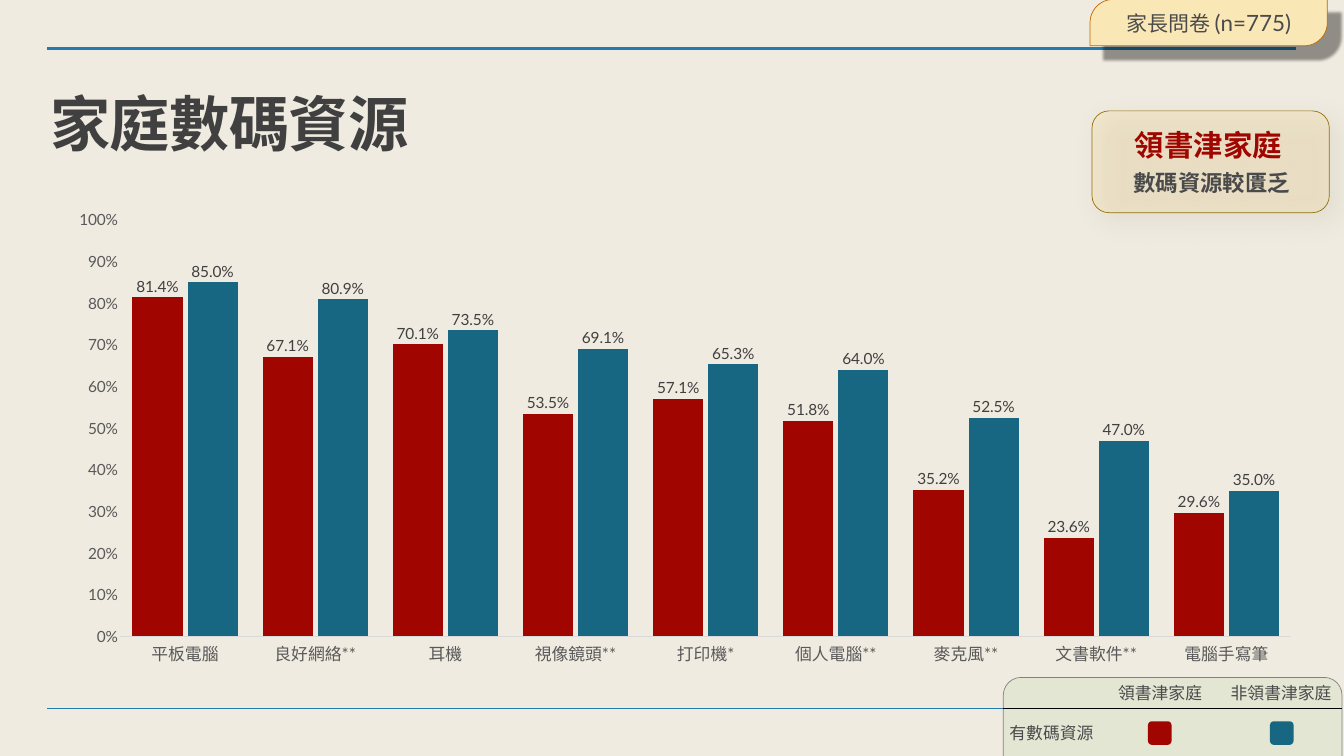
from lxml import etree
from pptx import Presentation
from pptx.chart.data import CategoryChartData
from pptx.dml.color import RGBColor
from pptx.enum.chart import XL_CHART_TYPE, XL_LABEL_POSITION, XL_TICK_LABEL_POSITION, XL_TICK_MARK
from pptx.enum.shapes import MSO_CONNECTOR, MSO_SHAPE
from pptx.enum.text import MSO_ANCHOR, MSO_AUTO_SIZE, PP_ALIGN
from pptx.oxml import parse_xml
from pptx.oxml.ns import nsdecls, qn
from pptx.util import Cm, Pt

CENTER = PP_ALIGN.CENTER
TOP, MIDDLE = MSO_ANCHOR.TOP, MSO_ANCHOR.MIDDLE
NO_TICK = XL_TICK_MARK.NONE
FONT = "Lato"
COLORS = {
    "page": "F0EBE0", "rule": "227AAF", "title": "404040", "axis": "595959",
    "grid": "D9D9D9", "text": "4A4A4B", "red": "A00500", "blue": "176682",
    "legend": "BCD9AA", "legend line": "808080", "note": "F7DC92",
    "note line": "936E0A", "tab": "FAE7B6", "tab line": "BF6500",
}
COLORS = {name: RGBColor.from_string(value) for name, value in COLORS.items()}


def add_panel(kind, place, fill, line=None, alpha=None, shadow=None):
    """Add a filled shape; shadow is colour, alpha %, blur pt, distance pt."""
    panel = page.shapes.add_shape(kind, *[Cm(value) for value in place])
    panel.shadow.inherit = False
    panel.fill.solid()
    panel.fill.fore_color.rgb = COLORS[fill]
    if line:
        panel.line.color.rgb = COLORS[line]
        panel.line.width = Pt(1)
    else:
        panel.line.fill.background()
    if alpha:
        color = panel._element.spPr.find(qn("a:solidFill"))[0]
        etree.SubElement(color, qn("a:alpha"), val=str(alpha * 1000))
    if shadow:
        shade, opacity, blur, distance = shadow
        panel._element.spPr.find(qn("a:effectLst")).append(parse_xml(
            f'<a:outerShdw {nsdecls("a")} blurRad="{Pt(blur)}" dist="{Pt(distance)}" '
            f'dir="2700000" algn="tl" rotWithShape="0"><a:srgbClr val="{shade}">'
            f'<a:alpha val="{opacity * 1000}"/></a:srgbClr></a:outerShdw>'))
    return panel


def add_span(para, text, size, color="text", bold=False, font=FONT):
    span = para.add_run()
    span.text = text
    span.font.name = font
    span.font.size = Pt(size)
    span.font.bold = bold
    span.font.color.rgb = COLORS[color]
    return span


deck = Presentation()
deck.slide_width, deck.slide_height = Cm(67.74), Cm(38.1)
page = deck.slides.add_slide(deck.slide_layouts[5])
page.background.fill.solid()
page.background.fill.fore_color.rgb = COLORS["page"]

# Rules across the page
for y, width in ((2.46, 4), (35.71, 1)):
    rule = page.shapes.add_connector(MSO_CONNECTOR.STRAIGHT, Cm(2.39), Cm(y), Cm(65.33), Cm(y))
    rule.line.color.rgb = COLORS["rule"]
    rule.line.width = Pt(width)
    etree.SubElement(rule._element.spPr, qn("a:effectLst"))

# Title
title = page.shapes.title
title.left, title.top, title.width, title.height = Cm(2.39), Cm(4.9), Cm(58.14), Cm(8.97)
frame = title.text_frame
frame.auto_size = MSO_AUTO_SIZE.NONE
frame.vertical_anchor = TOP
frame.margin_left = frame.margin_right = frame.margin_top = frame.margin_bottom = Cm(0.15)
para = frame.paragraphs[0]
para.alignment = PP_ALIGN.LEFT
para.line_spacing = 0.8
span = add_span(para, "家庭數碼資源", 86, "title", True, "Arial")
span._r.get_or_add_rPr().set("spc", "-90")

# Column chart
data = CategoryChartData(number_format="0.0%")
data.categories = ["平板電腦", "良好網絡**", "耳機", "視像鏡頭**", "打印機*",
                   "個人電腦**", "麥克風**", "文書軟件**", "電腦手寫筆"]
data.add_series("領書津家庭", [0.814, 0.671, 0.701, 0.535, 0.571, 0.518, 0.352, 0.236, 0.296])
data.add_series("非領書津家庭", [0.85, 0.809, 0.735, 0.691, 0.653, 0.64, 0.525, 0.47, 0.35])
chart = page.shapes.add_chart(XL_CHART_TYPE.COLUMN_CLUSTERED, Cm(2.39), Cm(10.01),
                              Cm(63.02), Cm(26.14), data).chart
chart.has_legend = chart.has_title = False
chart.font.name = FONT
chart.font.size = Pt(22)

plot = chart.plots[0]
plot.gap_width, plot.overlap = 50, -10
plot.vary_by_categories = False
for series, color in zip(plot.series, ("red", "blue")):
    series.format.fill.solid()
    series.format.fill.fore_color.rgb = COLORS[color]
    labels = series.data_labels
    labels.show_value = True
    labels.position = XL_LABEL_POSITION.OUTSIDE_END
    labels.number_format, labels.number_format_is_linked = "0.0%", False
    labels.font.name = FONT
    labels.font.size = Pt(22)
    labels.font.color.rgb = COLORS["title"]

for axis, size in ((chart.category_axis, 24), (chart.value_axis, 22)):
    axis.has_major_gridlines = False
    axis.major_tick_mark = axis.minor_tick_mark = NO_TICK
    axis.tick_labels.font.name = FONT
    axis.tick_labels.font.size = Pt(size)
    axis.tick_labels.font.color.rgb = COLORS["axis"]
chart.category_axis.tick_label_position = XL_TICK_LABEL_POSITION.LOW
chart.category_axis.format.line.color.rgb = COLORS["grid"]
chart.category_axis.format.line.width = Pt(1)
values = chart.value_axis
values.minimum_scale, values.maximum_scale, values.major_unit = 0, 1, 0.1
values.tick_labels.number_format = "0%"
values.tick_labels.number_format_is_linked = False
values.format.line.fill.background()

# Fixed inner plot area
area = chart._chartSpace.chart.plotArea
for old in area.findall(qn("c:layout")):
    area.remove(old)
area.insert(0, parse_xml(
    f'<c:layout {nsdecls("c")}><c:manualLayout><c:layoutTarget val="inner"/>'
    '<c:xMode val="edge"/><c:yMode val="edge"/><c:x val="0.058"/><c:y val="0.041"/>'
    '<c:w val="0.937"/><c:h val="0.803"/></c:manualLayout></c:layout>'))

# Legend panel, table and swatches
legend = add_panel(MSO_SHAPE.ROUND_2_SAME_RECTANGLE, (50.57, 34.14, 17.07, 4.06),
                   "legend", "legend line", 23)
legend.adjustments[0] = 0.22
table = page.shapes.add_table(2, 3, Cm(50.57), Cm(34.14), Cm(17.05), Cm(3.93)).table
table.first_row = table.horz_banding = False
table._tbl.tblPr.find(qn("a:tableStyleId")).text = "{2D5ABB26-0587-4C30-8999-92F81FD0307C}"
for column, width in zip(table.columns, (4.85, 6.1, 6.1)):
    column.width = Cm(width)
for row, height in zip(table.rows, (1.57, 2.36)):
    row.height = Cm(height)
entries = (("", "領書津家庭", "非領書津家庭"), ("有數碼資源", "", ""))
for row, texts in enumerate(entries):
    for column, text in enumerate(texts):
        cell = table.cell(row, column)
        cell.vertical_anchor = MIDDLE if row else TOP
        if text:
            para = cell.text_frame.paragraphs[0]
            para.alignment = CENTER
            add_span(para, text, 24)
        edge = "lnT" if row else "lnB"
        cell._tc.get_or_add_tcPr().append(parse_xml(
            f'<a:{edge} {nsdecls("a")} w="{Pt(1)}"><a:solidFill>'
            f'<a:srgbClr val="000000"/></a:solidFill></a:{edge}>'))
        cell.fill.background()
for x, color in ((57.86, "red"), (64.01, "blue")):
    add_panel(MSO_SHAPE.ROUNDED_RECTANGLE, (x, 36.35, 1.19, 1.19), color)

# Key message
add_panel(MSO_SHAPE.ROUNDED_RECTANGLE, (55.04, 5.59, 11.96, 5.13), "note", "note line", 23,
          ("4E4226", 30, 37, 16))
box = page.shapes.add_textbox(Cm(56.92), Cm(6.07), Cm(8.31), Cm(4.17))
frame = box.text_frame
frame.word_wrap = False
frame.vertical_anchor = MIDDLE
frame.margin_left = frame.margin_right = frame.margin_top = frame.margin_bottom = Cm(0.15)
para = frame.paragraphs[0]
for text, size, color in (("領書津家庭 ", 42, "red"), ("數碼資源較匱乏", 32, "text")):
    if para.runs:
        para = frame.add_paragraph()
    para.alignment = CENTER
    para.space_before = Pt(10)
    add_span(para, text, size, color, True)

# Survey tab
tab = add_panel(MSO_SHAPE.ROUND_2_DIAG_RECTANGLE, (54.94, -0.03, 11.96, 2.34), "tab", "tab line",
                shadow=("000000", 40, 4, 27))
tab.adjustments[0], tab.adjustments[1] = 0.5, 0
frame = tab.text_frame
frame.vertical_anchor = MIDDLE
frame.margin_left = frame.margin_right = frame.margin_top = frame.margin_bottom = Cm(0.15)
para = frame.paragraphs[0]
para.alignment = CENTER
add_span(para, "家長問卷 ", 30)
add_span(para, "(n=775)", 32)

deck.save("out.pptx")
